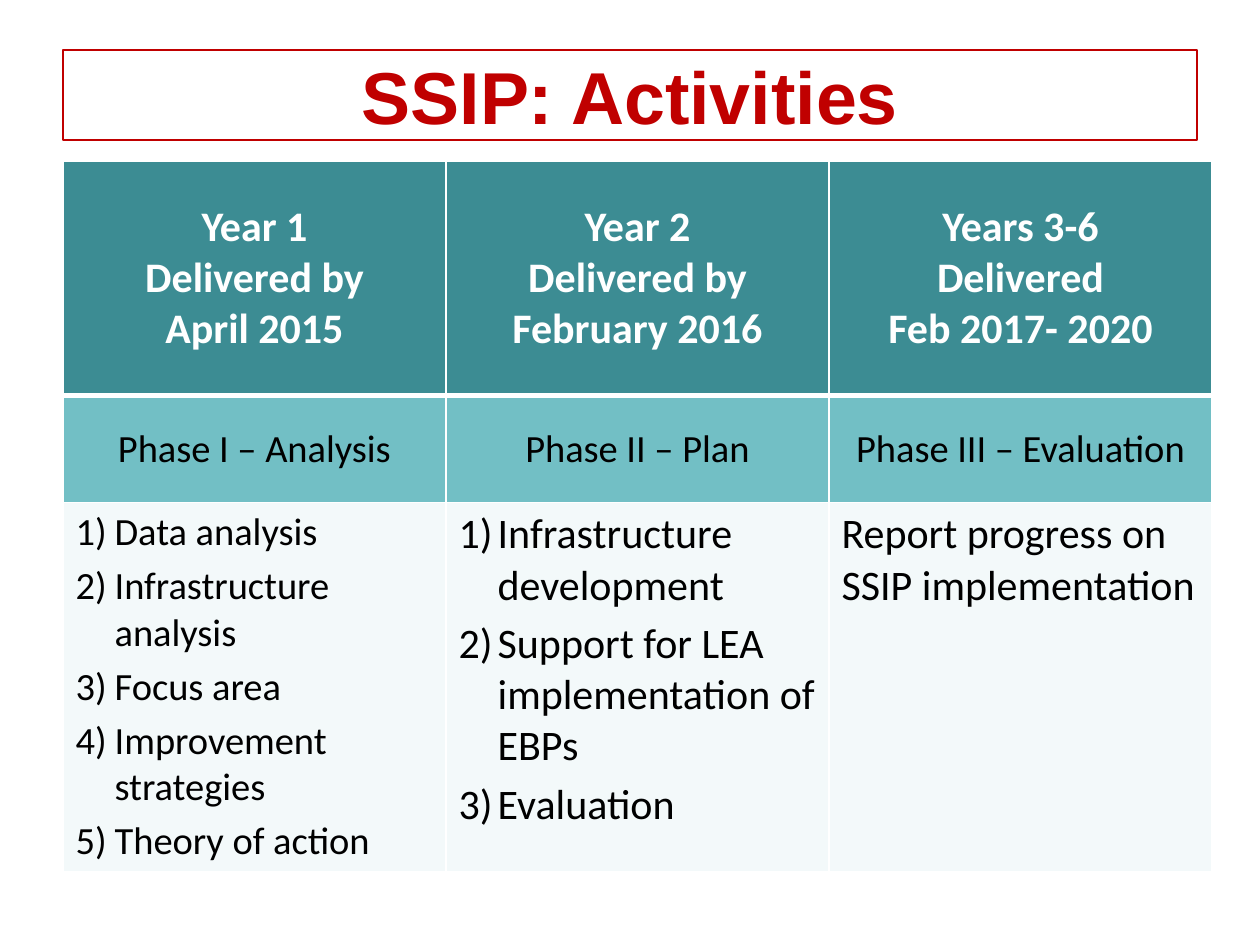
from lxml.etree import SubElement
from pptx import Presentation
from pptx.dml.color import RGBColor
from pptx.enum.shapes import MSO_SHAPE
from pptx.enum.text import MSO_ANCHOR, PP_ALIGN
from pptx.oxml.ns import qn
from pptx.util import Inches, Pt

HUES = {"red": "C00000", "teal": "3C8C93", "aqua": "72BFC5",
        "pale": "F3F9FA", "white": "FFFFFF", "black": "000000"}


def style(para, face, size, hue, bold=False):
    font = para.font
    font.name, font.size, font.bold = face, Pt(size), bold
    font.color.rgb = RGBColor.from_string(HUES[hue])


def edge(cell, side, width):
    """Draw a white border on one side of a cell."""
    line = SubElement(cell._tc.get_or_add_tcPr(), qn("a:" + side), w=str(Pt(width)))
    fill = SubElement(line, qn("a:solidFill"))
    SubElement(fill, qn("a:srgbClr"), val=HUES["white"])


prs = Presentation()
prs.slide_width, prs.slide_height = Inches(10), Inches(7.5)
slide = prs.slides.add_slide(prs.slide_layouts[6])
left = Inches(0.5)

# Title
title = slide.shapes.add_shape(
    MSO_SHAPE.RECTANGLE, left, Inches(0.4), Inches(9), Inches(0.71))
title.shadow.inherit = False
title.fill.background()
title.line.color.rgb = RGBColor.from_string(HUES["red"])
title.line.width = Pt(1.25)
frame = title.text_frame
frame.margin_left = frame.margin_right = frame.margin_top = frame.margin_bottom = 0
frame.vertical_anchor = MSO_ANCHOR.MIDDLE
frame.text = "SSIP: Activities"
frame.paragraphs[0].alignment = PP_ALIGN.CENTER
style(frame.paragraphs[0], "Arial", 42, "red", True)

# Each row: height, fill, text colour, and a size with lines for each cell
rows = [
    (1.86, "teal", "white", [
        (24, ["Year 1", "Delivered by", "April 2015"]),
        (24, ["Year 2", "Delivered by", "February 2016"]),
        (24, ["Years 3-6", "Delivered", "Feb 2017- 2020"])]),
    (0.85, "aqua", "black", [
        (22, ["Phase I – Analysis"]),
        (22, ["Phase II – Plan"]),
        (22, ["Phase III – Evaluation"])]),
    (2.92, "pale", "black", [
        (22, ["Data analysis", "Infrastructure analysis", "Focus area",
              "Improvement strategies", "Theory of action"]),
        (24, ["Infrastructure development",
              "Support for LEA implementation of EBPs", "Evaluation"]),
        (24, ["Report progress on SSIP implementation"])]),
]
col = Inches(3.04)
high = Inches(sum(row[0] for row in rows))
table = slide.shapes.add_table(3, 3, left, Inches(1.28), 3 * col, high).table

for r, (tall, fill, hue, cells) in enumerate(rows):
    table.rows[r].height = Inches(tall)
    for c, (size, lines) in enumerate(cells):
        cell = table.cell(r, c)
        cell.text = "\n".join(lines)
        cell.vertical_anchor = MSO_ANCHOR.TOP if r == 2 else MSO_ANCHOR.MIDDLE
        for side, width in (("lnL", 1), ("lnR", 1), ("lnT", 3 if r == 1 else 1),
                            ("lnB", 3 if r == 0 else 1)):
            edge(cell, side, width)
        cell.fill.solid()
        cell.fill.fore_color.rgb = RGBColor.from_string(HUES[fill])
        for para in cell.text_frame.paragraphs:
            para.alignment = PP_ALIGN.LEFT if r == 2 else PP_ALIGN.CENTER
            if r == 2 and c < 2:
                para.space_before = para.space_after = Pt(2)
                props = para._p.get_or_add_pPr()
                props.set("marL", str(Inches(0.31)))
                props.set("indent", str(-Inches(0.31)))
                SubElement(props, qn("a:buAutoNum"), type="arabicParenR")
            style(para, "Calibri", size, hue, r == 0)

prs.save("out.pptx")
